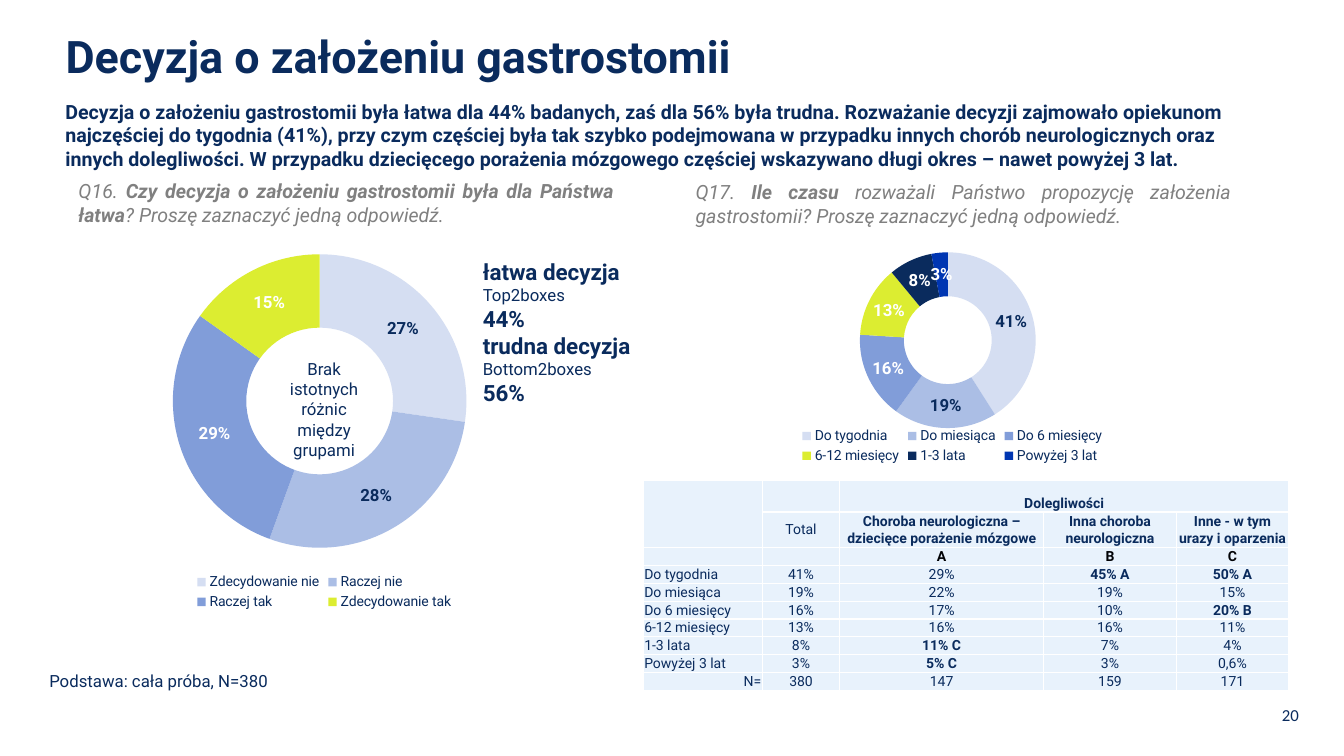
from lxml import etree
from pptx import Presentation
from pptx.chart import data as cd
from pptx.dml import color
from pptx.enum import chart as ce, text as te
from pptx.oxml import ns
from pptx.util import Inches, Pt

NAVY, GREY, WHITE, BLACK, PALE = "0A2B5D", "808080", "FFFFFF", "010205", "E8F2FC"
SLICES = ["D5DEF2", "ABBEE5", "819DD9", "DCED31", NAVY, "0036B2"]
LEFT, CENTER, RIGHT, JUSTIFY = (te.PP_ALIGN.LEFT, te.PP_ALIGN.CENTER,
                                te.PP_ALIGN.RIGHT, te.PP_ALIGN.JUSTIFY)
TOP, MIDDLE, BOTTOM = te.MSO_ANCHOR.TOP, te.MSO_ANCHOR.MIDDLE, te.MSO_ANCHOR.BOTTOM

TITLE = "Decyzja o założeniu gastrostomii"
LEAD = ("Decyzja o założeniu gastrostomii była łatwa dla 44% badanych, zaś dla 56% była trudna. "
        "Rozważanie decyzji zajmowało opiekunom najczęściej do tygodnia (41%), przy czym częściej "
        "była tak szybko podejmowana w przypadku innych chorób neurologicznych oraz innych "
        "dolegliwości. W przypadku dziecięcego porażenia mózgowego częściej wskazywano długi "
        "okres – nawet powyżej 3 lat.")
QUESTIONS = [
    ((0.68, 1.73, 5.51, 0.57),
     [("Q16. ", False), ("Czy decyzja o założeniu gastrostomii była dla Państwa łatwa", True),
      ("? Proszę zaznaczyć jedną odpowiedź.", False)]),
    ((6.8, 1.74, 5.51, 0.57),
     [("Q17. ", False), ("Ile czasu ", True),
      ("rozważali Państwo propozycję założenia gastrostomii? "
       "Proszę zaznaczyć jedną odpowiedź.", False)]),
]
DONUTS = [
    ((1, 2.45, 4.43, 3.64),
     {"Zdecydowanie nie": 0.27, "Raczej nie": 0.28, "Raczej tak": 0.29, "Zdecydowanie tak": 0.15}),
    ((7.23, 2.46, 4.43, 2.18),
     {"Do tygodnia": 0.41, "Do miesiąca": 0.19, "Do 6 miesięcy": 0.16,
      "6-12 miesięcy": 0.13, "1-3 lata": 0.08, "Powyżej 3 lat": 0.03}),
]
PLOT = {"x": 0.15, "y": 0.02, "w": 0.68, "h": 0.8}
SUMMARY = [("łatwa decyzja", "Top2boxes", "44%"), ("trudna decyzja", "Bottom2boxes", "56%")]
TABLE_AT = (6.38, 4.77)
COLS = [1.18, 0.77, 2.02, 1.32, 1.11]
ROWS = [0.31, 0.35, 0.18] + [0.17] * 7
CELLS = [
    ["", "", "Dolegliwości", "", ""],
    ["", "Total", "Choroba neurologiczna – dziecięce porażenie mózgowe",
     "Inna choroba neurologiczna", "Inne - w tym urazy i oparzenia"],
    ["", "", "A", "B", "C"],
    ["Do tygodnia", "41%", "29%", "45% A", "50% A"],
    ["Do miesiąca", "19%", "22%", "19%", "15%"],
    ["Do 6 miesięcy", "16%", "17%", "10%", "20% B"],
    ["6-12 miesięcy", "13%", "16%", "16%", "11%"],
    ["1-3 lata", "8%", "11% C", "7%", "4%"],
    ["Powyżej 3 lat", "3%", "5% C", "3%", "0,6%"],
    ["N=", "380", "147", "159", "171"],
]


def rgb(code):
    return color.RGBColor.from_string(code)


def style(f, size=12, hue=NAVY, bold=False, italic=False, face="Roboto"):
    f.size, f.bold, f.italic, f.name = Pt(size), bold, italic, face
    f.color.rgb = rgb(hue)


def write(p, text, align=LEFT, **fmt):
    p.alignment = align
    r = p.add_run()
    r.text = text
    style(r.font, **fmt)


def place(sp, at):
    sp.left, sp.top, sp.width, sp.height = map(Inches, at)


def box(at, wrap=True, anchor=TOP):
    tf = s.shapes.add_textbox(*map(Inches, at)).text_frame
    tf.word_wrap, tf.vertical_anchor = wrap, anchor
    return tf


def label(at, text, anchor=TOP, **fmt):
    write(box(at, anchor=anchor).paragraphs[0], text, **fmt)


def set_layout(chart):
    area = chart._chartSpace.chart.plotArea
    for old in area.findall(ns.qn("c:layout")):
        area.remove(old)
    layout = etree.Element(ns.qn("c:layout"))
    manual = etree.SubElement(layout, ns.qn("c:manualLayout"))
    parts = [("layoutTarget", "inner"), ("xMode", "edge"), ("yMode", "edge"), *PLOT.items()]
    for tag, val in parts:
        etree.SubElement(manual, ns.qn("c:" + tag)).set("val", str(val))
    area.insert(0, layout)


def donut(at, shares):
    data = cd.CategoryChartData(number_format="0%")
    data.categories = list(shares)
    data.add_series("Series 1", list(shares.values()))
    chart = s.shapes.add_chart(ce.XL_CHART_TYPE.DOUGHNUT, *map(Inches, at), data).chart
    chart.has_title = False
    style(chart.font, size=10, face="Calibri")
    chart.has_legend = True
    chart.legend.position = ce.XL_LEGEND_POSITION.BOTTOM
    chart.legend.include_in_layout = False
    style(chart.legend.font, size=10)
    set_layout(chart)
    series = chart.plots[0].series[0]
    labels = series.data_labels
    labels.show_value, labels.show_percentage = True, False
    labels.number_format, labels.number_format_is_linked = "0%", False
    style(labels.font, hue=WHITE, bold=True)
    for i, hue in zip(range(len(shares)), SLICES):
        point = series.points[i]
        point.format.fill.solid()
        point.format.fill.fore_color.rgb = rgb(hue)
        if i < 2:
            style(point.data_label.font, bold=True)


def border(cell):
    tc_pr = cell._tc.get_or_add_tcPr()
    for side in ("lnL", "lnR", "lnT", "lnB"):
        ln = etree.SubElement(tc_pr, ns.qn("a:" + side), w=str(Pt(1)))
        fill = etree.SubElement(ln, ns.qn("a:solidFill"))
        etree.SubElement(fill, ns.qn("a:srgbClr"), val=WHITE)


def fill_cell(cell, row, col, text):
    border(cell)
    cell.fill.solid()
    cell.fill.fore_color.rgb = rgb(PALE)
    cell.margin_left = cell.margin_right = cell.margin_top = Inches(0.01)
    cell.margin_bottom = 0
    cell.vertical_anchor = BOTTOM if row == 0 else MIDDLE if row < 3 else TOP
    p = cell.text_frame.paragraphs[0]
    if not text:
        p._p.get_or_add_endParaRPr().set("sz", "1000")
        return
    align = CENTER if col else RIGHT if text == "N=" else LEFT
    bold = col > 1 and (row < 3 or text[-1] in "ABC")
    write(p, text, align, size=10, bold=bold, hue=BLACK if row == 2 else NAVY)


def results_table():
    size = map(Inches, (*TABLE_AT, sum(COLS), sum(ROWS)))
    table = s.shapes.add_table(len(ROWS), len(COLS), *size).table
    table.first_row = table.horz_banding = False
    for column, width in zip(table.columns, COLS):
        column.width = Inches(width)
    for row, height in zip(table.rows, ROWS):
        row.height = Inches(height)
    for i, texts in enumerate(CELLS):
        for j, text in enumerate(texts):
            fill_cell(table.cell(i, j), i, j, text)
    table.cell(0, 0).merge(table.cell(1, 0))
    table.cell(0, 2).merge(table.cell(0, 4))


prs = Presentation()
prs.slide_width, prs.slide_height = Inches(13.33), Inches(7.5)
s = prs.slides.add_slide(prs.slide_layouts[5])

title = s.shapes.title
place(title, (0.55, 0.29, 10.37, 0.64))
tf = title.text_frame
tf.auto_size, tf.vertical_anchor = te.MSO_AUTO_SIZE.NONE, TOP
tf.paragraphs[0].line_spacing = 0.9
write(tf.paragraphs[0], TITLE, size=32, bold=True)

label((0.55, 0.94, 11.9, 0.81), LEAD, size=14, bold=True)
for at, runs in QUESTIONS:
    p = box(at).paragraphs[0]
    for text, bold in runs:
        write(p, text, JUSTIFY, size=14, hue=GREY, bold=bold, italic=True)

for at, shares in DONUTS:
    donut(at, shares)

tf = box((4.69, 2.51, 1.7, 1.58), wrap=False)
lines = [line for group in SUMMARY for line in group]
for i, text in enumerate(lines):
    p = tf.add_paragraph() if i else tf.paragraphs[0]
    small = i % 3 == 1
    write(p, text, size=12 if small else 16, bold=not small)

label((2.61, 3.51, 1.21, 0.91), "Brak istotnych różnic między grupami", align=CENTER)
results_table()
label((0.39, 6.61, 3.71, 0.3), "Podstawa: cała próba, N=380")
label((9.98, 6.89, 3, 0.4), "20", anchor=MIDDLE, align=RIGHT, face="Calibri")

prs.save("out.pptx")
